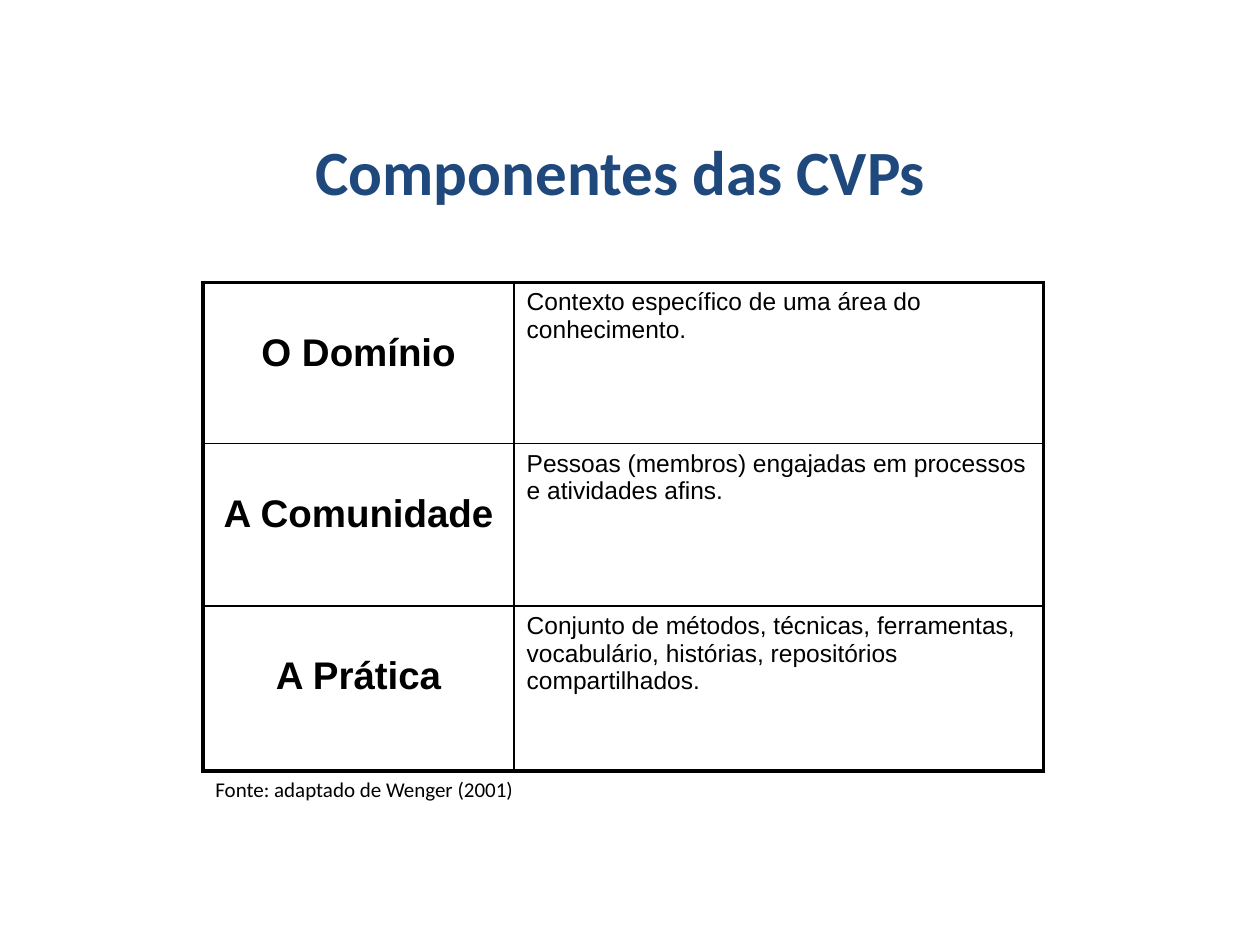
from lxml.etree import SubElement
from pptx import Presentation
from pptx.dml.color import RGBColor
from pptx.enum.text import MSO_ANCHOR as Anchor, PP_ALIGN as Align
from pptx.oxml.ns import qn
from pptx.util import Pt

NAVY = RGBColor(0x1F, 0x49, 0x7D)
BLACK = RGBColor(0, 0, 0)
OUTER_LINE, INNER_LINE = Pt(2.25), Pt(1)

TITLE = {"name": "Calibri", "size": Pt(36), "bold": True, "color": NAVY}
LABEL = {"name": "Arial", "size": Pt(22), "bold": True, "color": BLACK}
DETAIL = {"name": "Arial", "size": Pt(14), "bold": False, "color": BLACK}
SOURCE = {"name": "Calibri", "size": Pt(12), "bold": False, "color": BLACK}

COLUMN_WIDTHS = (177.8, 302.4)
ROW_HEIGHTS = (92.2, 92.9, 94.3)
COMPONENTS = [
    ("O Domínio", "Contexto específico de uma área do conhecimento."),
    ("A Comunidade",
     "Pessoas (membros) engajadas em processos e atividades afins."),
    ("A Prática",
     "Conjunto de métodos, técnicas, ferramentas, vocabulário, histórias, "
     "repositórios compartilhados."),
]


def write(frame, text, look, align=Align.LEFT):
    para = frame.paragraphs[0]
    para.alignment = align
    span = para.add_run()
    span.text = text
    for key, value in look.items():
        if key == "color":
            span.font.color.rgb = value
        else:
            setattr(span.font, key, value)


def add_title(page, left, top, width, height):
    box = page.shapes.title
    box.left, box.top, box.width, box.height = left, top, width, height
    box.text_frame.vertical_anchor = Anchor.MIDDLE
    write(box.text_frame, "Componentes das CVPs", TITLE, Align.CENTER)


def draw_borders(cell, widths):
    """Draw black cell edges; widths maps an edge tag to its line width."""
    props = cell._tc.get_or_add_tcPr()
    for index, (edge, width) in enumerate(widths.items()):
        line = SubElement(props, qn(f"a:{edge}"), w=str(width))
        fill = SubElement(line, qn("a:solidFill"))
        SubElement(fill, qn("a:srgbClr"), val=str(BLACK))
        props.insert(index, line)


def add_components(page, left, top):
    """Table of labels and details, with a heavy frame and thin inner lines."""
    rows, cols = len(ROW_HEIGHTS), len(COLUMN_WIDTHS)
    table = page.shapes.add_table(
        rows, cols, left, top,
        Pt(sum(COLUMN_WIDTHS)), Pt(sum(ROW_HEIGHTS))).table
    table.first_row = table.horz_banding = False
    for column, width in zip(table.columns, COLUMN_WIDTHS):
        column.width = Pt(width)
    for row, height in zip(table.rows, ROW_HEIGHTS):
        row.height = Pt(height)

    for r, texts in enumerate(COMPONENTS):
        for c, text in enumerate(texts):
            cell = table.cell(r, c)
            cell.fill.background()
            if c == 0:
                cell.margin_top = Pt(28)
                write(cell.text_frame, text, LABEL, Align.CENTER)
            else:
                write(cell.text_frame, text, DETAIL)
            on_frame = {"lnL": c == 0, "lnR": c == cols - 1,
                        "lnT": r == 0, "lnB": r == rows - 1}
            draw_borders(cell, {edge: OUTER_LINE if outer else INNER_LINE
                                for edge, outer in on_frame.items()})


def add_source(page, left, top, width, height):
    frame = page.shapes.add_textbox(left, top, width, height).text_frame
    frame.word_wrap = True
    write(frame, "Fonte: adaptado de Wenger (2001)", SOURCE)


def main():
    deck = Presentation()
    deck.slide_width, deck.slide_height = Pt(720), Pt(540)
    page = deck.slides.add_slide(deck.slide_layouts[5])
    add_title(page, Pt(14.4), Pt(54.7), Pt(680.4), Pt(85))
    add_components(page, Pt(116), Pt(161.3))
    add_source(page, Pt(116), Pt(440.3), Pt(250), Pt(28.8))
    deck.save("out.pptx")


if __name__ == "__main__":
    main()
